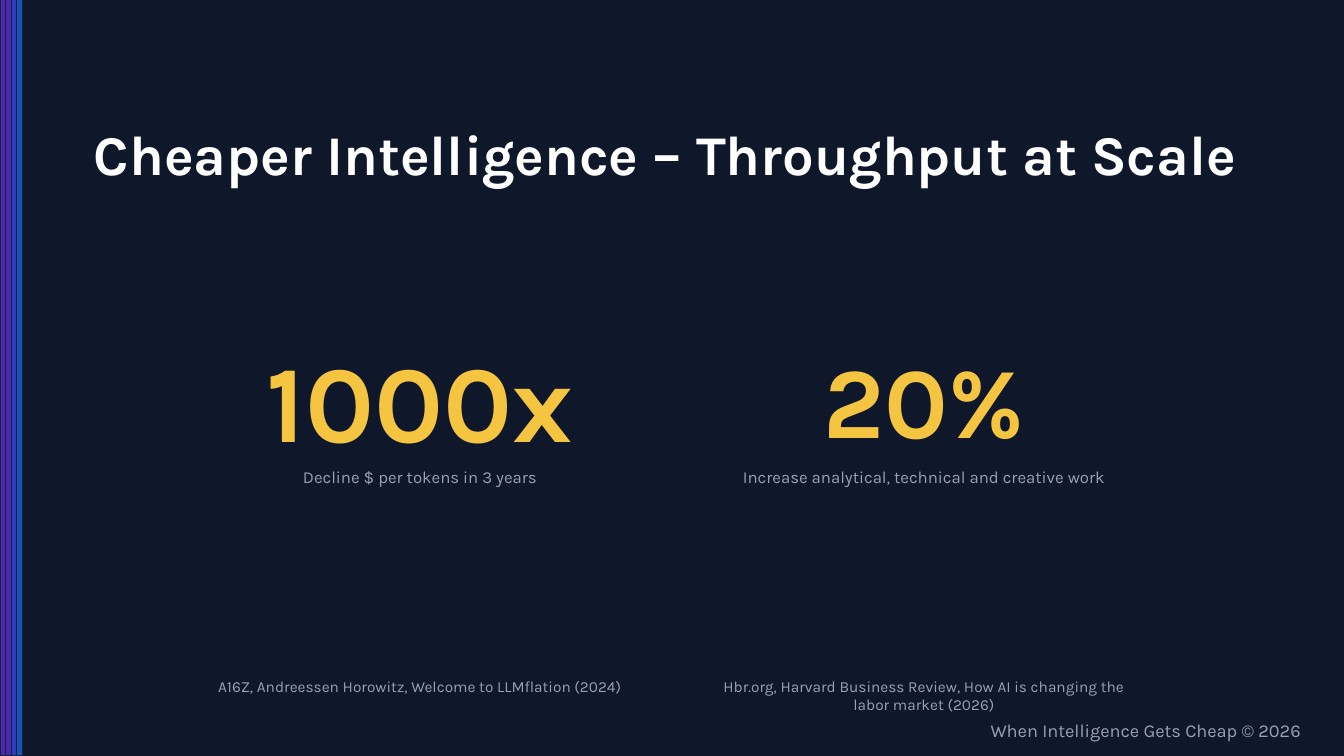
from pptx import Presentation
from pptx.dml.color import RGBColor
from pptx.enum.shapes import MSO_SHAPE
from pptx.enum.text import MSO_ANCHOR, MSO_AUTO_SIZE, PP_ALIGN
from pptx.oxml.ns import qn
from pptx.util import Pt
from lxml.etree import SubElement

COLORS = {
    "background": "0F172A",
    "white": "FFFFFF",
    "muted": "94A3B8",
    "gold": "F5C542",
    "outline": "092A39",
}
STRIPES = ["6D28D9", "5B2FE0", "3F48F0", "2563EB"]
WIDTH, HEIGHT = 960, 540


class SlideBuilder:
    """Holds the style and the current slide."""

    font = "Karla"

    def __init__(self, page):
        self.page = page

    def background(self, color):
        fill = self.page.background.fill
        fill.solid()
        fill.fore_color.rgb = RGBColor.from_string(color)

    def stripe(self, left, width, color, opacity=75):
        bar = self.page.shapes.add_shape(
            MSO_SHAPE.RECTANGLE, Pt(left), Pt(0), Pt(width), Pt(HEIGHT))
        bar.shadow.inherit = False
        bar.fill.solid()
        bar.fill.fore_color.rgb = RGBColor.from_string(color)
        fill_color = bar.fill._xPr.find(qn("a:solidFill"))[0]
        SubElement(fill_color, qn("a:alpha"), val=str(opacity * 1000))
        bar.line.color.rgb = RGBColor.from_string(COLORS["outline"])
        bar.line.width = Pt(0)

    def text(self, text, left, top, width, height, size=12, color="muted",
             bold=False, align=PP_ALIGN.CENTER, anchor=MSO_ANCHOR.TOP, grow=True):
        box = self.page.shapes.add_textbox(Pt(left), Pt(top), Pt(width), Pt(height))
        frame = box.text_frame
        frame.word_wrap = True
        frame.auto_size = MSO_AUTO_SIZE.SHAPE_TO_FIT_TEXT if grow else MSO_AUTO_SIZE.NONE
        frame.vertical_anchor = anchor
        para = frame.paragraphs[0]
        para.alignment = align
        span = para.add_run()
        span.text = text
        span.font.name = self.font
        span.font.size = Pt(size)
        span.font.bold = bold
        span.font.color.rgb = RGBColor.from_string(COLORS[color])


def main():
    deck = Presentation()
    deck.slide_width, deck.slide_height = Pt(WIDTH), Pt(HEIGHT)
    builder = SlideBuilder(deck.slides.add_slide(deck.slide_layouts[6]))
    builder.background(COLORS["background"])

    # Stripes on the left edge, the rightmost at the back
    stripe_width = 4
    for index, color in reversed(list(enumerate(STRIPES))):
        builder.stripe(index * stripe_width, stripe_width, color)

    # Title
    builder.text("Cheaper Intelligence – Throughput at Scale", 60, 82, 840, 90,
                 size=40, color="white", bold=True, align=PP_ALIGN.LEFT, grow=False)

    # Key figures: number, caption and source in each column
    figures = [
        ("1000x", 78, 101.5, "Decline $ per tokens in 3 years",
         "A16Z, Andreessen Horowitz, Welcome to LLMflation (2024)", 21),
        ("20%", 72, 94.5, "Increase analytical, technical and creative work",
         "Hbr.org, Harvard Business Review, How AI is changing the labor market (2026)", 34),
    ]
    column_left, column_step, column_width, number_middle = 140, 360, 320, 284.75
    for index, (number, size, height, caption, source, source_height) in enumerate(figures):
        left = column_left + index * column_step
        builder.text(number, left, number_middle - height / 2, column_width, height,
                     size=size, color="gold", bold=True, anchor=MSO_ANCHOR.MIDDLE)
        builder.text(caption, left, 330, column_width, 21.5)
        builder.text(source, left, 480, column_width, source_height, size=11)

    # Footer
    builder.text("When Intelligence Gets Cheap © 2026", 681, 510, 255, 23,
                 size=13, align=PP_ALIGN.RIGHT)

    deck.save("out.pptx")


if __name__ == "__main__":
    main()
